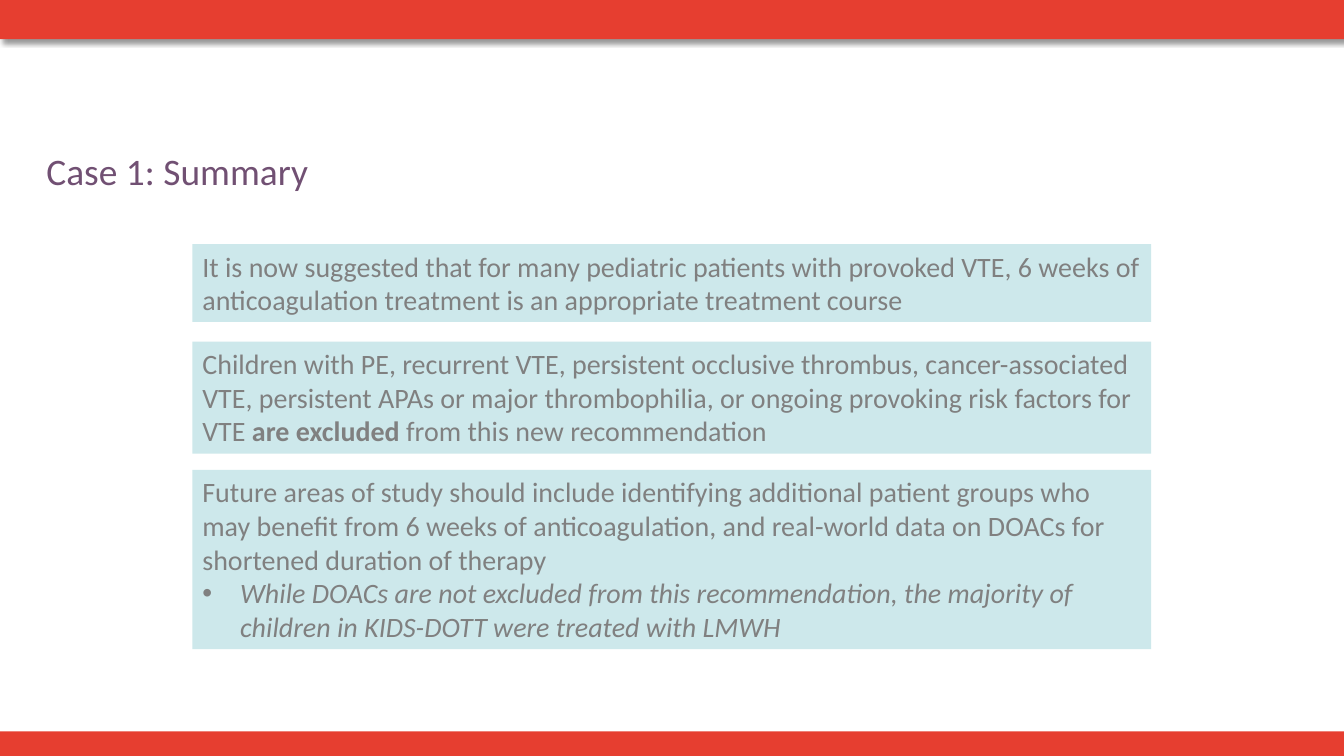
from lxml import etree
from pptx import Presentation
from pptx.dml.color import RGBColor
from pptx.enum import shapes, text
from pptx.oxml import parse_xml
from pptx.oxml.ns import nsdecls, qn
from pptx.util import Cm, Pt

RED, PURPLE, GREY, PALE = "E63E30", "715073", "808080", "CDE8EB"
FONT = "Calibri"
WIDTH, HEIGHT = 33.87, 19.05
BOX_LEFT, BOX_WIDTH = 4.85, 24.16

TITLE = "Case 1: Summary"
# Each box: top, height, paragraphs; a paragraph is (bulleted, [(text, style)])
BOXES = [
    (6.15, 1.96, [
        (False, [("It is now suggested that for many pediatric patients with provoked VTE, "
                  "6 weeks of anticoagulation treatment is an appropriate treatment course", "")]),
    ]),
    (8.61, 2.82, [
        (False, [("Children with PE, recurrent VTE, persistent occlusive thrombus, "
                  "cancer-associated VTE, persistent APAs or major thrombophilia, or ongoing "
                  "provoking risk factors for VTE ", ""),
                 ("are excluded ", "bold"),
                 ("from this new recommendation", "")]),
    ]),
    (11.84, 4.52, [
        (False, [("Future areas of study should include identifying additional patient groups "
                  "who may benefit from 6 weeks of anticoagulation, and real-world data on DOACs "
                  "for shortened duration of therapy", "")]),
        (True, [("While DOACs are not excluded from this recommendation, the majority of "
                 "children in KIDS-DOTT were treated with LMWH", "italic")]),
    ]),
]


def rgb(color):
    return RGBColor.from_string(color)


def add_rect(s, left, top, width, height, color):
    sp = s.shapes.add_shape(shapes.MSO_SHAPE.RECTANGLE,
                            Cm(left), Cm(top), Cm(width), Cm(height))
    sp.shadow.inherit = False
    sp.fill.solid()
    sp.fill.fore_color.rgb = rgb(color)
    sp.line.fill.background()
    return sp


def add_shadow(sp):
    effects = sp._element.spPr.find(qn("a:effectLst"))
    effects.append(parse_xml(
        f'<a:outerShdw {nsdecls("a")} blurRad="{Pt(4)}" dist="{Pt(3)}" dir="2700000" '
        'algn="tl" rotWithShape="0"><a:srgbClr val="000000"><a:alpha val="40000"/>'
        '</a:srgbClr></a:outerShdw>'))


def add_bullet(p):
    pPr = p._p.get_or_add_pPr()
    pPr.set("marL", str(Cm(0.95)))
    pPr.set("indent", str(-Cm(0.95)))
    etree.SubElement(pPr, qn("a:buFont"), typeface="Arial")
    etree.SubElement(pPr, qn("a:buChar"), char="•")


def add_run(p, words, size, color, style=""):
    r = p.add_run()
    r.text = words
    r.font.name, r.font.size = FONT, Pt(size)
    r.font.color.rgb = rgb(color)
    r.font.bold = style == "bold"
    r.font.italic = style == "italic"


def add_title(s):
    tf = s.shapes.add_textbox(Cm(1.17), Cm(3.73), Cm(30.48), Cm(1.98)).text_frame
    tf.word_wrap = True
    tf.margin_left = tf.margin_right = tf.margin_top = tf.margin_bottom = 0
    add_run(tf.paragraphs[0], TITLE, 26.7, PURPLE)


def add_box(s, top, height, paragraphs):
    tf = add_rect(s, BOX_LEFT, top, BOX_WIDTH, height, PALE).text_frame
    tf.word_wrap = True
    tf.vertical_anchor = text.MSO_ANCHOR.TOP
    for i, (bulleted, runs) in enumerate(paragraphs):
        p = tf.add_paragraph() if i else tf.paragraphs[0]
        p.alignment = text.PP_ALIGN.LEFT
        if bulleted:
            add_bullet(p)
        for words, style in runs:
            add_run(p, words, 20, GREY, style)


def main():
    prs = Presentation()
    prs.slide_width, prs.slide_height = Cm(WIDTH), Cm(HEIGHT)
    s = prs.slides.add_slide(prs.slide_layouts[6])
    add_rect(s, 0, 18.43, WIDTH, 0.62, RED)
    add_shadow(add_rect(s, 0, -0.03, WIDTH, 1.02, RED))
    add_title(s)
    for box in BOXES:
        add_box(s, *box)
    prs.save("out.pptx")


if __name__ == "__main__":
    main()
